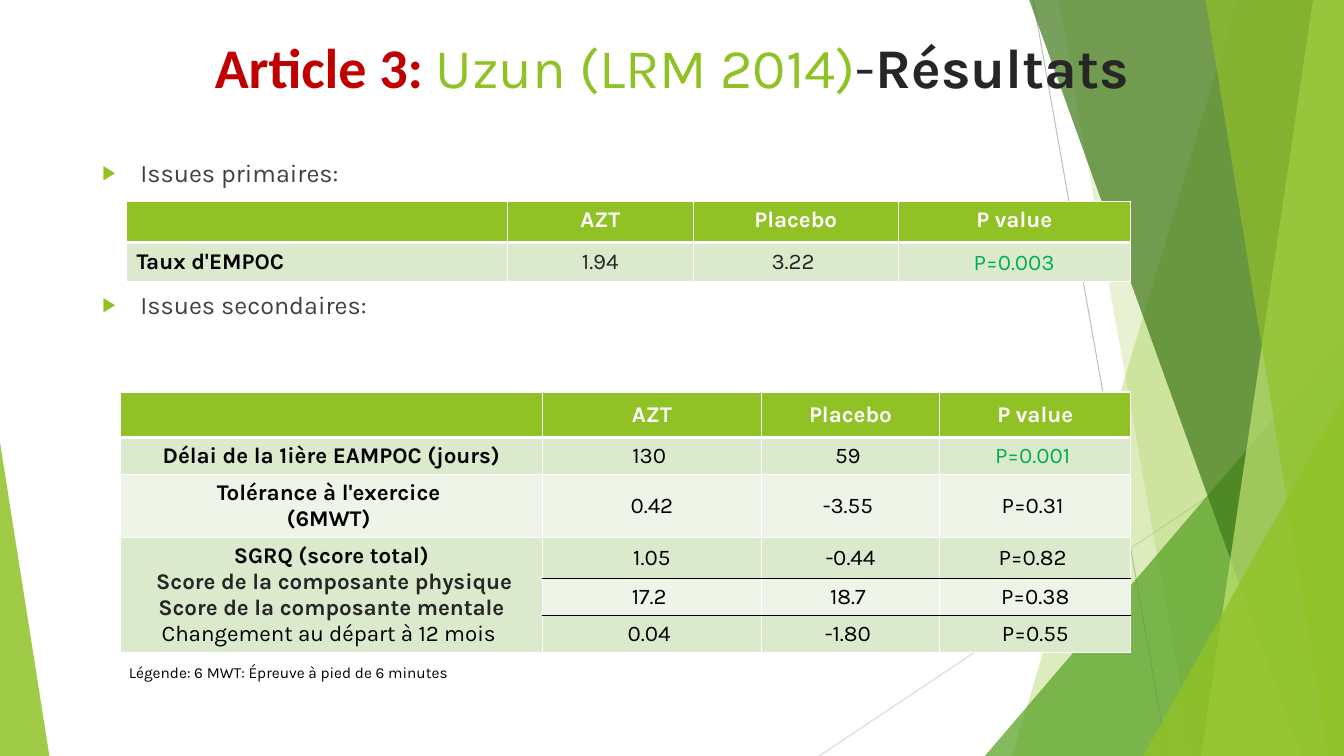
from pptx import Presentation, util as u
from pptx.dml.color import RGBColor
from pptx.enum import shapes, text
from pptx.oxml import ns, parse_xml

LIME = RGBColor(0x90, 0xC2, 0x26)
GRASS = RGBColor(0x54, 0xA0, 0x21)
MOSS = RGBColor(0x3F, 0x78, 0x19)
PALE = RGBColor(0xC0, 0xE4, 0x74)
BAND = RGBColor(0xDB, 0xE9, 0xCD)
MIST = RGBColor(0xEE, 0xF4, 0xE8)
GREEN = RGBColor(0x00, 0xB0, 0x50)
RED = RGBColor(0xC0, 0x00, 0x00)
INK = RGBColor(0x26, 0x26, 0x26)
GREY = RGBColor(0x40, 0x40, 0x40)
BLACK = RGBColor(0, 0, 0)
WHITE = RGBColor(0xFF, 0xFF, 0xFF)
WIDE, HIGH = 960, 540


class Deck:
    font = "Karla"

    def __init__(self):
        self.prs = Presentation()
        self.prs.slide_width, self.prs.slide_height = u.Pt(WIDE), u.Pt(HIGH)
        self.slide = self.prs.slides.add_slide(self.prs.slide_layouts[1])
        self.items = self.slide.shapes

    def style(self, run, size, color, bold=False, font=None):
        run.font.name = font or self.font
        run.font.size = u.Pt(size)
        run.font.bold = bold
        run.font.color.rgb = color

    def tint(self, shape, color, alpha):
        shape.shadow.inherit = False
        shape.line.fill.background()
        shape.fill.solid()
        shape.fill.fore_color.rgb = color
        tone = shape.element.spPr.find(".//" + ns.qn("a:srgbClr"))
        tone.append(parse_xml(f'<a:alpha {ns.nsdecls("a")} val="{alpha * 1000}"/>'))

    def line(self, x1, y1, x2, y2, color):
        rule = self.items.add_connector(
            shapes.MSO_CONNECTOR.STRAIGHT, u.Pt(x1), u.Pt(y1), u.Pt(x2), u.Pt(y2))
        rule.line.color.rgb = color
        rule.line.width = u.Pt(0.75)
        rule.element.spPr.append(parse_xml(f'<a:effectLst {ns.nsdecls("a")}/>'))

    def pane(self, top, foot, color, alpha):
        """Pane from a slanted left edge to the right side of the slide."""
        form = self.items.build_freeform(u.Pt(top), u.Pt(-0.6))
        corners = [(WIDE, -0.6), (WIDE, HIGH), (foot, HIGH)]
        form.add_line_segments([(u.Pt(x), u.Pt(y)) for x, y in corners], close=True)
        self.tint(form.convert_to_shape(), color, alpha)

    def wedge(self, x, y, tip, color, alpha, wide):
        """Right triangle standing on the bottom edge."""
        shape = self.items.add_shape(shapes.MSO_SHAPE.ISOSCELES_TRIANGLE,
                                     u.Pt(x), u.Pt(y), u.Pt(wide), u.Pt(HIGH - y))
        shape.adjustments[0] = tip
        self.tint(shape, color, alpha)

    def place(self, holder, y, high):
        """Set a placeholder in front of the backdrop."""
        holder.left, holder.top = u.Pt(66), u.Pt(y)
        holder.width, holder.height = u.Pt(828), u.Pt(high)
        frame = holder.text_frame
        frame.word_wrap = True
        frame.auto_size = text.MSO_AUTO_SIZE.NONE
        frame.vertical_anchor = text.MSO_ANCHOR.TOP
        holder.element.getparent().append(holder.element)
        return frame

    def title(self, pieces):
        para = self.place(self.items.title, 19.5, 104.5).paragraphs[0]
        para.alignment = text.PP_ALIGN.CENTER
        for words, color, bold, font in pieces:
            run = para.add_run()
            run.text = words
            self.style(run, 40, color, bold, font)

    def points(self, rows):
        frame = self.place(self.slide.placeholders[1], 108.7, 402.5)
        frame.text = "\n".join(words for words, gap in rows)
        for para, (words, gap) in zip(frame.paragraphs, rows):
            para.space_before = u.Pt(gap)
            self.style(para.runs[0], 18, GREY)
            props = para._p.get_or_add_pPr()
            props.set("marL", str(u.Pt(27)))
            props.set("indent", str(u.Pt(-27)))
            for mark in (f'buClr {ns.nsdecls("a")}><a:srgbClr val="{LIME}"/></a:buClr',
                         f'buSzPct {ns.nsdecls("a")} val="80000"/',
                         f'buChar {ns.nsdecls("a")} char="▶"/'):
                props.append(parse_xml(f"<a:{mark}>"))

    def edge(self, cell, side, color, width):
        cell._tc.get_or_add_tcPr().append(parse_xml(
            f'<a:ln{side} {ns.nsdecls("a")} w="{u.Pt(width)}"><a:solidFill>'
            f'<a:srgbClr val="{color}"/></a:solidFill></a:ln{side}>'))

    def grid(self, x, y, cols, highs, rows, ink=BLACK, thin=()):
        """Table with a header row, banded rows and thin rules above some rows."""
        table = self.items.add_table(len(rows), len(cols), u.Pt(x), u.Pt(y),
                                     u.Pt(sum(cols)), u.Pt(sum(highs))).table
        for col, wide in zip(table.columns, cols):
            col.width = u.Pt(wide)
        for row, high in zip(table.rows, highs):
            row.height = u.Pt(high)

        def rule(r, c):
            if r == 1:
                return WHITE, 3
            return (BLACK, 0.25) if r in thin and c else (WHITE, 1)

        for r, row in enumerate(rows):
            for c, words in enumerate(row):
                cell = table.cell(r, c)
                for side, look in (("L", (WHITE, 1)), ("R", (WHITE, 1)),
                                   ("T", rule(r, c)), ("B", rule(r + 1, c))):
                    self.edge(cell, side, *look)
                cell.fill.solid()
                cell.fill.fore_color.rgb = LIME if r == 0 else BAND if r % 2 else MIST
                cell.vertical_anchor = text.MSO_ANCHOR.MIDDLE
                cell.text_frame.text = words
                color = (WHITE if r == 0 else BLACK if c == 0
                         else GREEN if words.startswith("P=0.00") else ink)
                for para in cell.text_frame.paragraphs:
                    para.alignment = text.PP_ALIGN.CENTER
                    for run in para.runs:
                        self.style(run, 16, color, r == 0 or c == 0)
        return table

    def note(self, x, y, wide, high, words):
        frame = self.items.add_textbox(u.Pt(x), u.Pt(y), u.Pt(wide), u.Pt(high)).text_frame
        frame.word_wrap = True
        frame.text = words
        self.style(frame.paragraphs[0].runs[0], 11, BLACK)


def main():
    deck = Deck()

    # Backdrop
    deck.line(738, 0, 834, HIGH, RGBColor(0xBF, 0xBF, 0xBF))
    deck.line(WIDE, 290, 585, HIGH, RGBColor(0xD9, 0xD9, 0xD9))
    deck.pane(884, 723, LIME, 30)
    deck.pane(756, 852, LIME, 20)
    deck.wedge(703.5, 240, 1, GRASS, 72, 256.5)
    deck.pane(735, 929.5, MOSS, 70)
    deck.pane(938, 858, PALE, 70)
    deck.pane(861, 949, LIME, 65)
    deck.wedge(816.5, 283, 1, LIME, 80, 143.5)
    deck.wedge(0, 316, 0, LIME, 85, 35.3)

    # Title and list
    deck.title([("Article 3: ", RED, True, "Calibri"),
                ("Uzun (LRM 2014)", LIME, False, None),
                ("-", INK, False, None),
                ("Résultats", INK, True, None)])
    deck.points([("Issues primaires: ", 10), ("Issues secondaires: ", 73)])

    # Secondary outcomes
    head = ["", "AZT", "Placebo", "P value"]
    scores = "\n".join(["SGRQ (score total)", " Score de la composante physique",
                        " Score de la composante mentale ",
                        "Changement au départ à 12 mois "])
    second = deck.grid(86, 280, [301.5, 156.3, 127.5, 136.5],
                       [32.4, 26.5, 44.8, 29.6, 26.5, 26.5],
                       [head,
                        ["Délai de la 1ière EAMPOC (jours)", "130 ", "59 ", "P=0.001 "],
                        ["Tolérance à l'exercice \n(6MWT) ", "0.42", "-3.55 ", "P=0.31 "],
                        [scores, "1.05", "-0.44", "P=0.82 "],
                        ["", "17.2 ", "18.7 ", "P=0.38"],
                        ["", "0.04 ", "-1.80 ", "P=0.55"]], thin=(4, 5))
    second.cell(3, 0).merge(second.cell(5, 0))
    lines = second.cell(3, 0).text_frame.paragraphs
    for para in lines[1:3]:
        para.runs[0].font.color.rgb = INK
    lines[3].runs[0].font.bold = False

    # Primary outcome
    first = deck.grid(90.3, 144, [272, 133, 146.3, 165.8], [28.1, 28.1],
                      [head, ["Taux d'EMPOC ", "1.94", "3.22 ", "P=0.003"]], ink=INK)
    for c in range(len(head)):
        first.cell(0, c).vertical_anchor = text.MSO_ANCHOR.TOP
    first.cell(1, 0).text_frame.paragraphs[0].alignment = text.PP_ALIGN.LEFT
    value = first.cell(1, 3).text_frame.paragraphs[0]
    value.line_spacing, value.space_after = 1.07, u.Pt(2)

    # Legend
    deck.note(85, 470, 359, 21, "Légende: 6 MWT: Épreuve à pied de 6 minutes")

    deck.prs.save("out.pptx")


if __name__ == "__main__":
    main()
